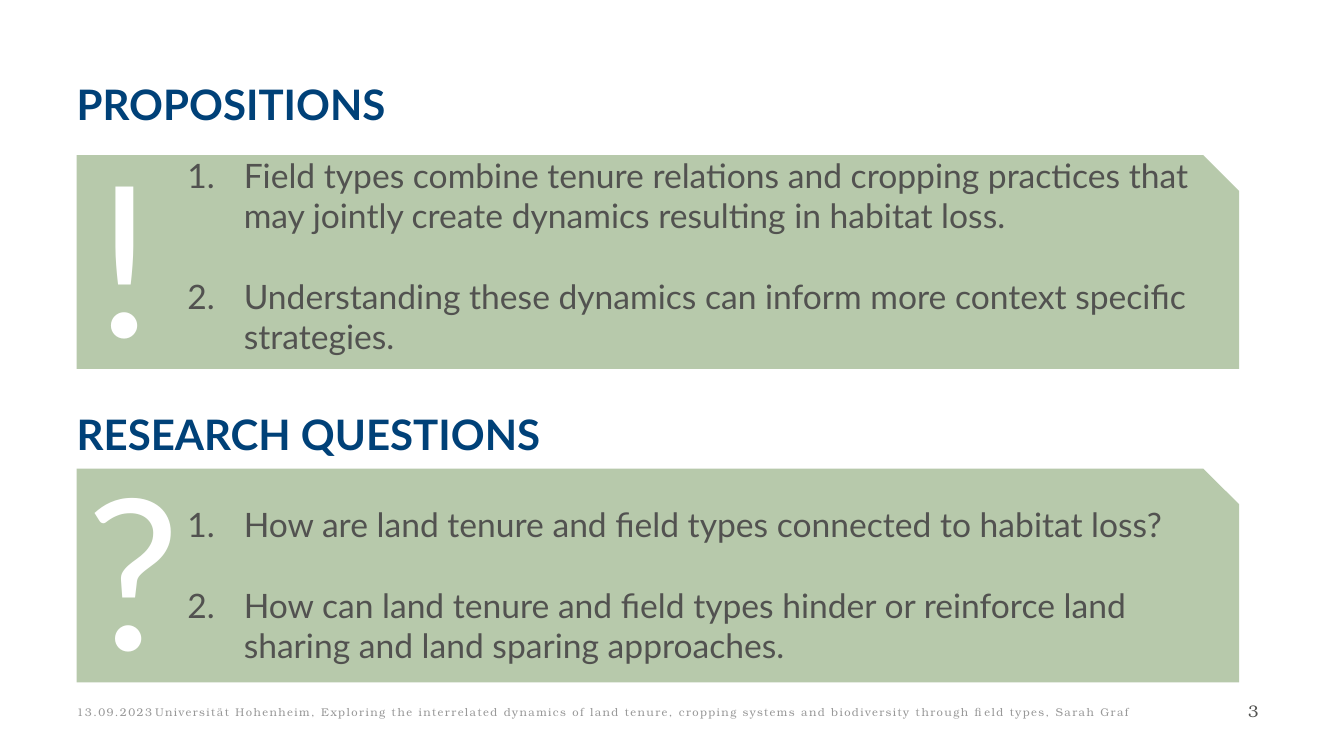
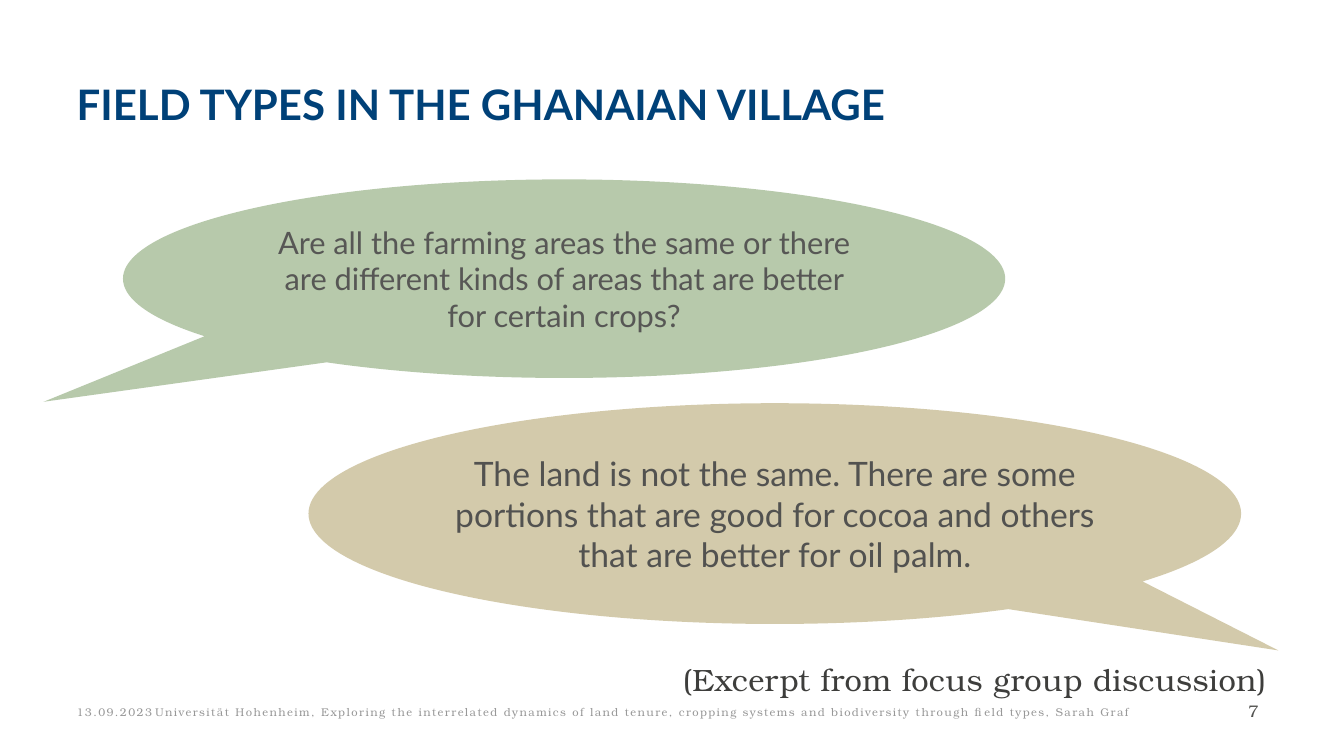
from lxml.etree import SubElement
from pptx import Presentation
from pptx.dml.color import RGBColor
from pptx.enum.shapes import MSO_SHAPE as Shape
from pptx.enum.text import MSO_ANCHOR as Anchor, PP_ALIGN as Align
from pptx.oxml.ns import qn
from pptx.util import Inches, Pt

NAVY = RGBColor(0x00, 0x41, 0x78)
GREEN = RGBColor(0x4B, 0x78, 0x2D)
SAND = RGBColor(0x92, 0x7C, 0x2D)
GRAY = RGBColor(0x52, 0x52, 0x50)
LIGHT_GRAY = RGBColor(0x98, 0x98, 0x98)
DARK_GRAY = RGBColor(0x3E, 0x3E, 0x3C)
SOFT_GRAY = RGBColor(0x57, 0x57, 0x55)
WHITE = RGBColor(0xFF, 0xFF, 0xFF)

SANS = "Lato"
SERIF = "TeX Gyre Bonum"
LEFT = 0.76
CONTENT_WIDTH = 11.81
PANEL_WIDTH = 11.53
FOOTER_TOP = 6.76
FOOTER_HEIGHT = 0.6
OPACITY = 40
DATE = "13.09.2023"
FOOTER = (
    "Universität Hohenheim, Exploring the interrelated dynamics of land tenure, "
    "cropping systems and biodiversity through field types, Sarah Graf"
)


class SlideBuilder:
    def __init__(self, deck):
        self.deck = deck
        self.page = None

    def new_page(self, title, number):
        self.page = self.deck.slides.add_slide(self.deck.slide_layouts[6])
        self.heading(title, 0.84)
        self.footer(DATE, LEFT, 0.78, wrap=False)
        self.footer(FOOTER, 1.54, 10)
        self.text(str(number), 12.29, 6.87, 0.28, 0.37, 12, GRAY,
                  font=SERIF, align=Align.CENTER, anchor=Anchor.MIDDLE)

    def span(self, para, text, size, color, font=SANS, bold=False, spacing=0):
        span = para.add_run()
        span.text = text
        span.font.size = Pt(size)
        span.font.name = font
        span.font.bold = bold
        span.font.color.rgb = color
        if spacing:
            span.font._element.set("spc", str(round(spacing * 100)))

    def text(self, text, left, top, width, height, size, color, font=SANS,
             bold=False, spacing=0, align=Align.LEFT, anchor=Anchor.TOP,
             line_spacing=None, inset=0, wrap=True):
        box = self.page.shapes.add_textbox(
            Inches(left), Inches(top), Inches(width), Inches(height))
        frame = box.text_frame
        frame.word_wrap = wrap
        frame.vertical_anchor = anchor
        frame.margin_left = frame.margin_right = Inches(inset)
        frame.margin_top = frame.margin_bottom = Inches(inset / 2)
        para = frame.paragraphs[0]
        para.alignment = align
        para.line_spacing = line_spacing
        self.span(para, text, size, color, font, bold, spacing)

    def heading(self, text, top):
        self.text(text, LEFT, top, CONTENT_WIDTH, 0.51, 30, NAVY,
                  bold=True, line_spacing=0.9)

    def footer(self, text, left, width, wrap=True):
        self.text(text, left, FOOTER_TOP, width, FOOTER_HEIGHT, 8, LIGHT_GRAY,
                  font=SERIF, spacing=1, anchor=Anchor.MIDDLE, wrap=wrap)

    def symbol(self, mark, left, top):
        self.text(mark, left, top, 0.88, 2.63, 150, WHITE, inset=0.1)

    def tinted_shape(self, kind, left, top, width, height, color):
        shape = self.page.shapes.add_shape(
            kind, Inches(left), Inches(top), Inches(width), Inches(height))
        shape.shadow.inherit = False
        shape.line.fill.background()
        shape.fill.solid()
        shape.fill.fore_color.rgb = color
        tint = shape._element.spPr.find(qn("a:solidFill"))[0]
        SubElement(tint, qn("a:alpha")).set("val", str(OPACITY * 1000))
        shape.text_frame.word_wrap = True
        shape.text_frame.vertical_anchor = Anchor.MIDDLE
        return shape

    def numbered_panel(self, top, items, bottom_inset=0.05):
        panel = self.tinted_shape(
            Shape.SNIP_1_RECTANGLE, LEFT, top, PANEL_WIDTH, 2.12, GREEN)
        frame = panel.text_frame
        frame.margin_bottom = Inches(bottom_inset)
        for index, item in enumerate(items):
            para = frame.add_paragraph() if index else frame.paragraphs[0]
            para.alignment = Align.LEFT
            if index:
                para.space_before = Pt(28.8)
            props = para._p.get_or_add_pPr()
            props.set("marL", str(Inches(1.56)))
            props.set("indent", str(Inches(-0.56)))
            SubElement(props, qn("a:buFont")).set("typeface", "+mj-lt")
            SubElement(props, qn("a:buAutoNum")).set("type", "arabicPeriod")
            self.span(para, item, 24, GRAY)

    def speech_bubble(self, text, left, top, width, height, tip, fill, size, color):
        bubble = self.tinted_shape(
            Shape.OVAL_CALLOUT, left, top, width, height, fill)
        bubble.adjustments[0], bubble.adjustments[1] = tip
        para = bubble.text_frame.paragraphs[0]
        para.alignment = Align.CENTER
        self.span(para, text, size, color)


def main():
    deck = Presentation()
    deck.slide_width = Inches(13.33)
    deck.slide_height = Inches(7.5)
    builder = SlideBuilder(deck)

    builder.new_page("PROPOSITIONS", 3)
    builder.numbered_panel(1.54, [
        "Field types combine tenure relations and cropping practices that may "
        "jointly create dynamics resulting in habitat loss.",
        "Understanding these dynamics can inform more context specific strategies.",
    ], bottom_inset=0.35)
    builder.symbol("!", 0.86, 1.22)
    builder.heading("RESEARCH QUESTIONS", 4.11)
    builder.numbered_panel(4.65, [
        "How are land tenure and field types connected to habitat loss?",
        "How can land tenure and field types hinder or reinforce land sharing "
        "and land sparing approaches.",
    ])
    builder.symbol("?", LEFT, 4.32)

    builder.new_page("FIELD TYPES IN THE GHANAIAN VILLAGE", 7)
    builder.speech_bubble(
        "Are all the farming areas the same or there are different kinds of "
        "areas that are better for certain crops?",
        1.22, 1.78, 8.75, 1.97, (-0.59, 0.62), GREEN, 22, SOFT_GRAY)
    builder.speech_bubble(
        "The land is not the same. There are some portions that are good for "
        "cocoa and others that are better for oil palm.",
        3.06, 4, 9.25, 2.19, (0.54, 0.62), SAND, 24, GRAY)
    builder.text("(Excerpt from focus group discussion)", LEFT, 6.56,
                 CONTENT_WIDTH, 0.4, 22, DARK_GRAY, font=SERIF, spacing=0.3,
                 align=Align.RIGHT)

    deck.save("out.pptx")


if __name__ == "__main__":
    main()
